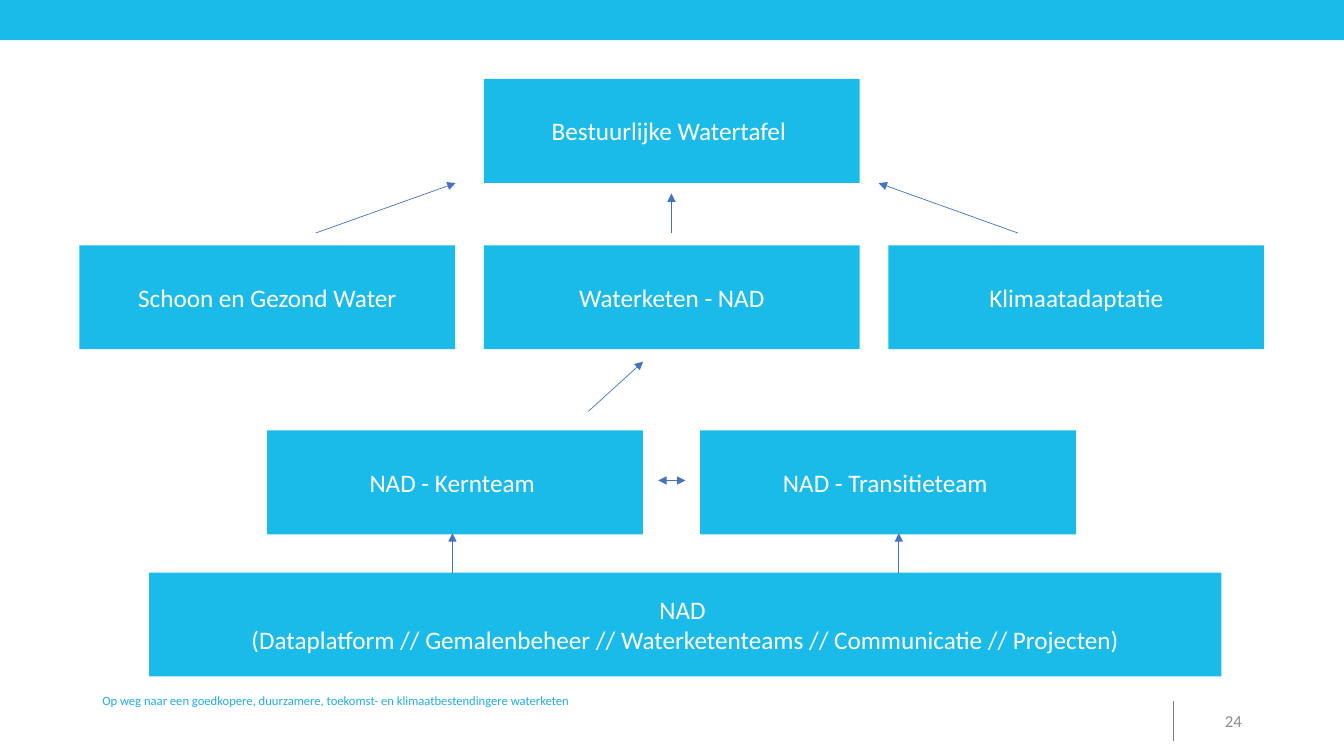
from dataclasses import dataclass

from lxml.etree import SubElement
from pptx import Presentation
from pptx.dml.color import RGBColor
from pptx.enum.shapes import MSO_CONNECTOR as Connector, MSO_SHAPE as Shape
from pptx.enum.text import MSO_ANCHOR as Anchor, PP_ALIGN as Align
from pptx.oxml.ns import qn
from pptx.shapes.autoshape import Shape as AutoShape
from pptx.slide import Slide
from pptx.text.text import TextFrame
from pptx.util import Pt

CYAN = "1BBBE9"
ARROW_BLUE = "4472C4"
SLIDE_WIDTH, SLIDE_HEIGHT = 960, 540
TEAM_WIDTH, BOX_HEIGHT = 268.5, 74.2
THEME_LEFT, THEME_STEP = 56.7, 288.9
BOARD_TOP, THEME_TOP, TEAM_TOP, NAD_TOP = 56.4, 175.2, 307.5, 409
FOOTER_HEIGHT = 28.8


@dataclass(frozen=True)
class Group:
    text: str
    left: float
    top: float
    width: float = TEAM_WIDTH


@dataclass(frozen=True)
class Link:
    x1: float
    y1: float
    x2: float
    y2: float
    ends: tuple[str, ...] = ("tailEnd",)
    color: str = ARROW_BLUE


@dataclass(frozen=True)
class Note:
    text: str
    left: float
    top: float
    width: float
    size: float
    color: str
    align: Align


GROUPS = [
    Group("Bestuurlijke Watertafel ", THEME_LEFT + THEME_STEP, BOARD_TOP),
    *(
        Group(theme, THEME_LEFT + column * THEME_STEP, THEME_TOP)
        for column, theme in enumerate(
            ["Schoon en Gezond Water", "Waterketen - NAD", "Klimaatadaptatie"]
        )
    ),
    Group("NAD - Kernteam ", 190.8, TEAM_TOP),
    Group("NAD - Transitieteam ", 500.2, TEAM_TOP),
    Group(
        "NAD \n(Dataplatform // Gemalenbeheer // Waterketenteams // "
        "Communicatie // Projecten)",
        106.5, NAD_TOP, 766,
    ),
]

LINKS = [
    Link(838, 500.4, 838, 529.2, (), "7F7F7F"),
    Link(225.4, 166.5, 325.4, 130.8),
    Link(727.2, 166.5, 627.6, 130.8),
    Link(479.6, 166.5, 479.6, 138.2),
    Link(420.3, 293.8, 459.4, 258.3),
    Link(323.2, NAD_TOP, 323.2, 380.9),
    Link(642, NAD_TOP, 642, 380.9),
    Link(470.2, 343.2, 489.6, 343.2, ("headEnd", "tailEnd")),
]

NOTES = [
    Note(
        "Op weg naar een goedkopere, duurzamere, toekomst- en "
        "klimaatbestendingere waterketen",
        66, 486.3, 576, 9, "20AEE4", Align.LEFT,
    ),
    Note("24", 678.2, 500.4, 216, 12, "8C8C8C", Align.RIGHT),
]


def rgb(color: str) -> RGBColor:
    return RGBColor.from_string(color)


def write(frame: TextFrame, text: str, size: float, color: str, align: Align) -> None:
    frame.word_wrap = True
    frame.vertical_anchor = Anchor.MIDDLE
    frame.text = text
    for paragraph in frame.paragraphs:
        paragraph.alignment = align
        for run in paragraph.runs:
            run.font.name = "Calibri"
            run.font.size = Pt(size)
            run.font.color.rgb = rgb(color)


def draw_block(
    slide: Slide, left: float, top: float, width: float, height: float
) -> AutoShape:
    block = slide.shapes.add_shape(
        Shape.RECTANGLE, Pt(left), Pt(top), Pt(width), Pt(height)
    )
    block.shadow.inherit = False
    block.fill.solid()
    block.fill.fore_color.rgb = rgb(CYAN)
    block.line.fill.background()
    return block


def draw_group(slide: Slide, group: Group) -> None:
    block = draw_block(slide, group.left, group.top, group.width, BOX_HEIGHT)
    write(block.text_frame, group.text, 18, "FFFFFF", Align.CENTER)


def draw_link(slide: Slide, link: Link) -> None:
    connector = slide.shapes.add_connector(
        Connector.STRAIGHT, Pt(link.x1), Pt(link.y1), Pt(link.x2), Pt(link.y2)
    )
    connector.line.color.rgb = rgb(link.color)
    connector.line.width = Pt(0.5)
    properties = connector.element.spPr
    outline = properties.find(qn("a:ln"))
    for end in link.ends:
        SubElement(outline, qn(f"a:{end}"), type="triangle")
    SubElement(properties, qn("a:effectLst"))


def draw_note(slide: Slide, note: Note) -> None:
    box = slide.shapes.add_textbox(
        Pt(note.left), Pt(note.top), Pt(note.width), Pt(FOOTER_HEIGHT)
    )
    write(box.text_frame, note.text, note.size, note.color, note.align)


def main() -> None:
    presentation = Presentation()
    presentation.slide_width = Pt(SLIDE_WIDTH)
    presentation.slide_height = Pt(SLIDE_HEIGHT)
    slide = presentation.slides.add_slide(presentation.slide_layouts[6])
    draw_block(slide, 0, 0, SLIDE_WIDTH, 28.8)
    for note in NOTES:
        draw_note(slide, note)
    for group in GROUPS:
        draw_group(slide, group)
    for link in LINKS:
        draw_link(slide, link)
    presentation.save("out.pptx")


if __name__ == "__main__":
    main()
